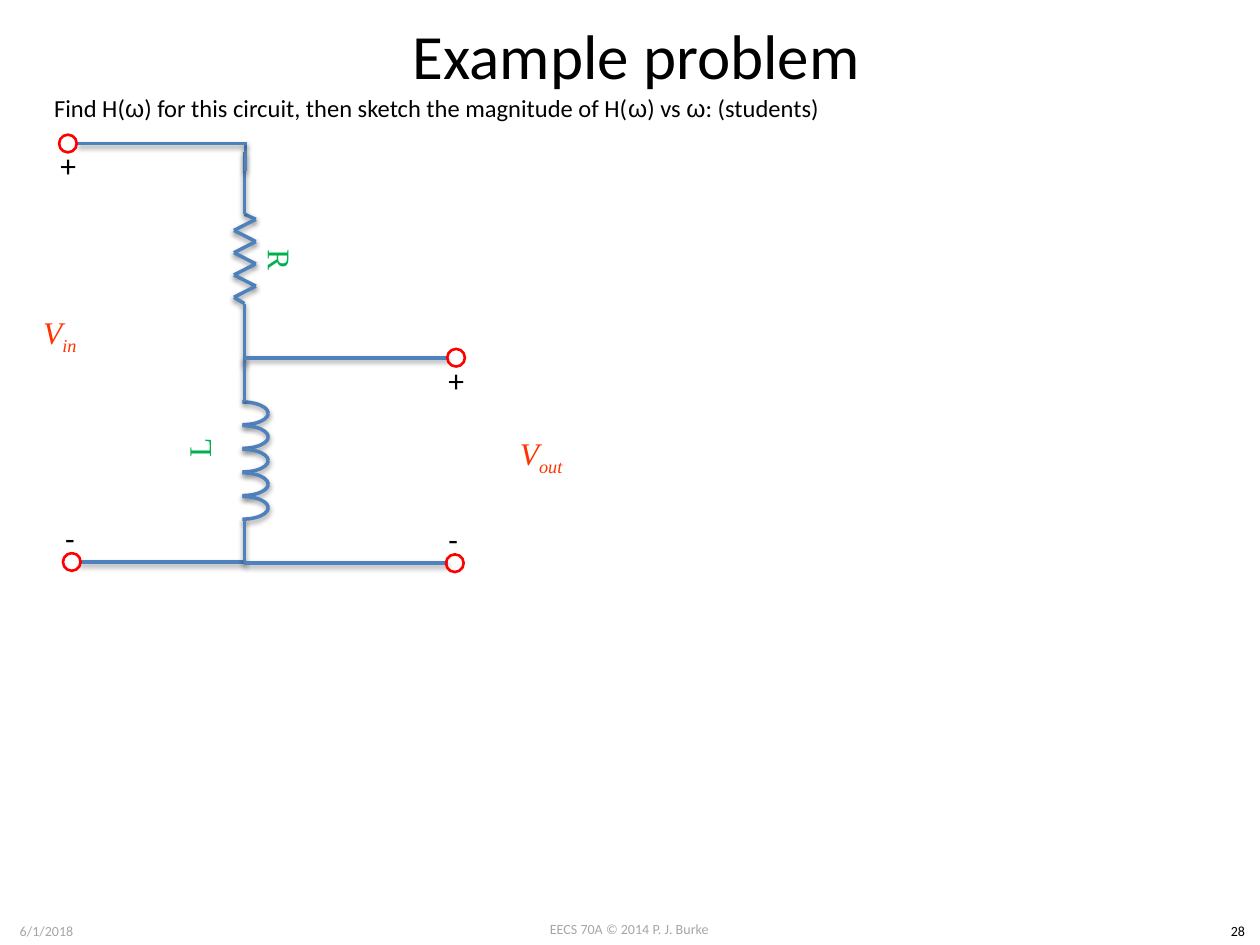
from dataclasses import dataclass
from itertools import pairwise

from lxml import etree
from pptx import Presentation
from pptx.dml.color import RGBColor
from pptx.enum.shapes import MSO_CONNECTOR, MSO_SHAPE
from pptx.enum.text import MSO_ANCHOR, PP_ALIGN
from pptx.oxml.ns import qn
from pptx.util import Pt

STRAIGHT = MSO_CONNECTOR.STRAIGHT
ARC, OVAL = MSO_SHAPE.ARC, MSO_SHAPE.OVAL
LEFT, CENTER = PP_ALIGN.LEFT, PP_ALIGN.CENTER
TOP, MIDDLE = MSO_ANCHOR.TOP, MSO_ANCHOR.MIDDLE

BODY, GREEK, SYMBOL = "Calibri", "Arial", "Times New Roman"
BLACK, GRAY, BLUE, RED = "000000", "A6A6A6", "4F81BD", "FF0000"
GREEN, ORANGE = "00B050", "FF3300"

SPINE = 139.7  # x of the branch holding the resistor and the coil
OUTPUT_Y, GROUND_Y = 204.5, 321.8
RESISTOR_TOP, RESISTOR_BOTTOM = 122.4, 173.5
ZIGZAG_LEFT, ZIGZAG_RIGHT, ZIGZAG_TOP, ZIGZAG_STEP = 133.7, 146.2, 125.3, 6.37
COIL_TOP, COIL_BOTTOM = 229.7, 296.6
LOOP_COUNT, LOOP_STEP = 5, 13.5
TERMINAL_SIZE = 10.1


@dataclass
class Span:
    text: str
    font: str = BODY
    italic: bool = False
    subscript: bool = False


@dataclass
class Label:
    left: float
    top: float
    width: float
    height: float
    spans: list[Span]
    size: float = 18
    color: str = BLACK
    align: PP_ALIGN = LEFT
    anchor: MSO_ANCHOR = TOP
    rotation: float = 0
    wrap: bool = True
    hanging: float = 0


@dataclass
class Wire:
    x1: float
    y1: float
    x2: float
    y2: float


@dataclass
class Terminal:
    left: float
    top: float


def rgb(color: str) -> RGBColor:
    return RGBColor.from_string(color)


def add_shadow(shape) -> None:
    """Give a part the soft shadow that falls straight down."""
    effects = etree.SubElement(shape._element.spPr, qn("a:effectLst"))
    outer = etree.SubElement(effects, qn("a:outerShdw"), blurRad=str(Pt(3.1)),
                             dist=str(Pt(1.6)), dir="5400000", rotWithShape="0")
    tint = etree.SubElement(outer, qn("a:srgbClr"), val=BLACK)
    etree.SubElement(tint, qn("a:alpha"), val="38000")


def style_line(shape, color: str, width: float) -> None:
    shape.line.color.rgb = rgb(color)
    shape.line.width = Pt(width)


def fill_text(box, label: Label) -> None:
    """Place a box and write the label into it."""
    box.left, box.top = Pt(label.left), Pt(label.top)
    box.width, box.height = Pt(label.width), Pt(label.height)
    box.rotation = label.rotation
    frame = box.text_frame
    frame.word_wrap = label.wrap
    frame.vertical_anchor = label.anchor
    para = frame.paragraphs[0]
    para.alignment = label.align
    if label.hanging:
        properties = para._p.get_or_add_pPr()
        properties.set("marL", str(Pt(label.hanging)))
        properties.set("indent", str(-Pt(label.hanging)))
    for span in label.spans:
        run = para.add_run()
        run.text = span.text
        run.font.name = span.font
        run.font.size = Pt(label.size)
        run.font.italic = span.italic
        run.font.color.rgb = rgb(label.color)
        if span.subscript:
            run._r.get_or_add_rPr().set("baseline", "-25000")


def draw_label(page, label: Label) -> None:
    fill_text(page.shapes.add_textbox(0, 0, 0, 0), label)


def draw_wire(page, wire: Wire) -> None:
    line = page.shapes.add_connector(
        STRAIGHT, Pt(wire.x1), Pt(wire.y1), Pt(wire.x2), Pt(wire.y2))
    style_line(line, BLUE, 2)
    add_shadow(line)


def draw_resistor(page) -> None:
    corners = [(ZIGZAG_LEFT if i % 2 else ZIGZAG_RIGHT, ZIGZAG_TOP + i * ZIGZAG_STEP)
               for i in range(8)]
    points = [(SPINE, RESISTOR_TOP), *corners, (SPINE, RESISTOR_BOTTOM)]
    for start, end in pairwise(points):
        draw_wire(page, Wire(*start, *end))


def draw_coil(page) -> None:
    """Each loop is an upper quarter arc and its mirror image below."""
    for i in range(LOOP_COUNT):
        for flipped in (False, True):
            arc = page.shapes.add_shape(
                ARC, Pt(123.8), Pt(COIL_TOP + i * LOOP_STEP), Pt(29.5), Pt(13))
            arc.fill.background()
            style_line(arc, BLUE, 2)
            add_shadow(arc)
            if flipped:
                arc._element.spPr.xfrm.set("flipV", "1")


def draw_terminal(page, terminal: Terminal) -> None:
    ring = page.shapes.add_shape(OVAL, Pt(terminal.left), Pt(terminal.top),
                                 Pt(TERMINAL_SIZE), Pt(TERMINAL_SIZE))
    ring.shadow.inherit = False
    ring.fill.background()
    style_line(ring, RED, 1.5)


def footer(left: float, top: float, width: float, text: str, color: str = GRAY) -> Label:
    return Label(left, top, width, 17, [Span(text)], 8, color, CENTER)


def voltage(left: float, top: float, name: str) -> Label:
    spans = [Span("V", SYMBOL, True), Span(name, SYMBOL, True, True)]
    return Label(left, top, 55.4, 43.9, spans, 18, ORANGE, CENTER, MIDDLE)


def component(left: float, top: float, name: str, rotation: float) -> Label:
    return Label(left, top, 85.7, 52.6, [Span(name, SYMBOL)], 18, GREEN,
                 CENTER, MIDDLE, rotation)


def polarity(left: float, top: float, sign: str) -> Label:
    return Label(left, top, 23.8 if sign == "+" else 20.2, 29, [Span(sign)], wrap=False)


TITLE = Label(39.6, 0, 648, 62.6, [Span("Example problem")], 36,
              align=CENTER, anchor=MIDDLE)
OMEGA = Span("ω", GREEK)
TASK = Label(23.8, 49.7, 641.5, 24.5, [
    Span("Find H("), OMEGA,
    Span(") for this circuit, then sketch the magnitude of H("), OMEGA,
    Span(") vs "), OMEGA, Span(": (students)")], 14, hanging=27.4)
LABELS = [
    footer(275.8, 522.7, 167.8, "EECS 70A © 2014 P. J. Burke"),
    footer(0, 523.4, 53.3, "6/1/2018"),
    footer(694.8, 523.4, 25.2, "28", BLACK),
    TASK,
    component(117.4, 122.4, "R", 90), component(70.6, 229.7, "L", 270),
    voltage(6.5, 169.2, "in"), voltage(281.5, 238.3, "out"),
    polarity(27.4, 79.9, "+"), polarity(30.2, 293, "-"),
    polarity(249.1, 203, "+"), polarity(249.1, 293.8, "-"),
]
WIRES = [
    Wire(SPINE, 87.1, SPINE, RESISTOR_TOP),
    Wire(SPINE, RESISTOR_BOTTOM, SPINE, 208.8),
    Wire(45.4, 321.3, 140.4, 321.3),
    Wire(140.4, 97.9, 140.4, 82.1),
    Wire(141.1, 82.1, 44.6, 82.1),
    Wire(SPINE, COIL_TOP, SPINE, OUTPUT_Y),
    Wire(SPINE, GROUND_Y, SPINE, COIL_BOTTOM),
    Wire(SPINE, OUTPUT_Y, 256.3, OUTPUT_Y),
    Wire(SPINE, GROUND_Y, 256.3, GROUND_Y),
]
TERMINALS = [Terminal(33.8, 77), Terminal(36, 316.1),
             Terminal(255.6, 199.4), Terminal(254.9, 316.8)]


def main() -> None:
    deck = Presentation()
    deck.slide_width, deck.slide_height = Pt(720), Pt(540)
    page = deck.slides.add_slide(deck.slide_layouts[5])
    fill_text(page.shapes.title, TITLE)
    draw_resistor(page)
    draw_coil(page)
    for wire in WIRES:
        draw_wire(page, wire)
    for terminal in TERMINALS:
        draw_terminal(page, terminal)
    for label in LABELS:
        draw_label(page, label)
    deck.save("out.pptx")


if __name__ == "__main__":
    main()
